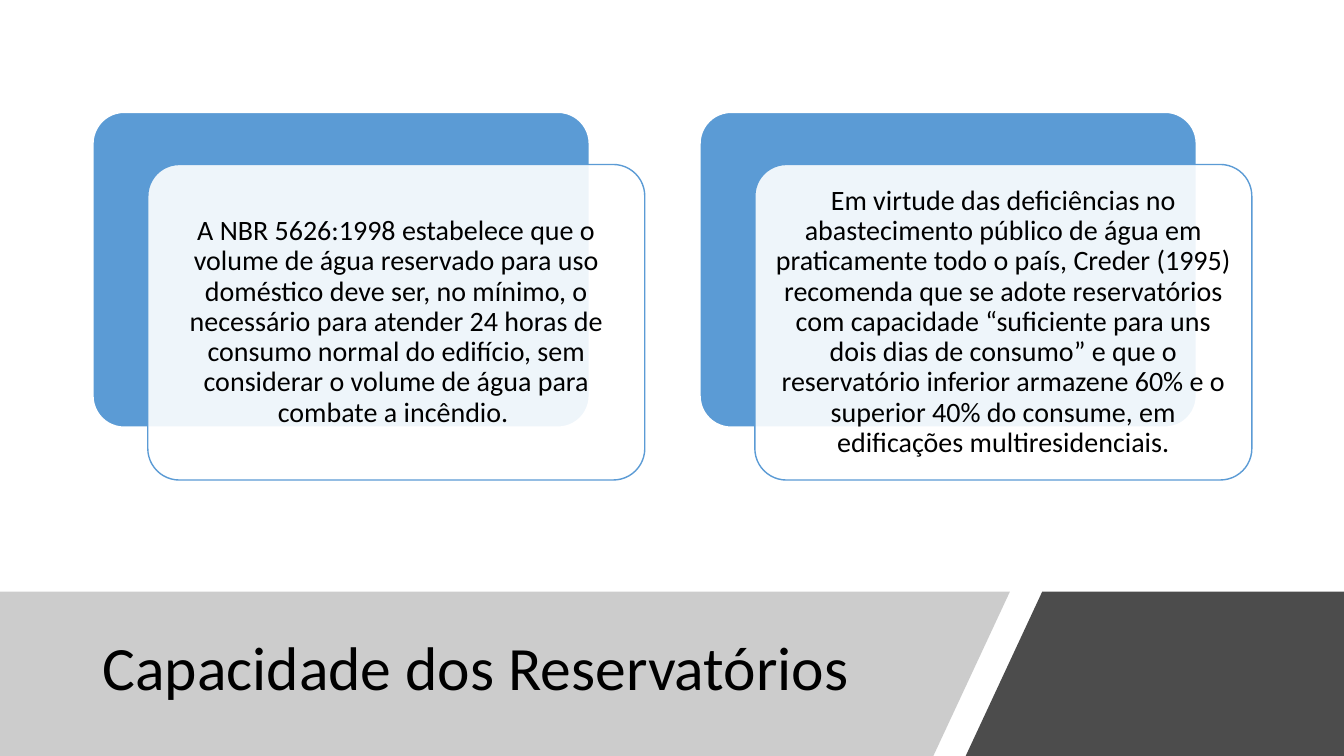
import lxml.etree
import pptx
import pptx.dml.color
import pptx.enum.shapes
import pptx.enum.text
import pptx.oxml.ns
import pptx.util

TITLE = "Capacidade dos Reservatórios"
STATEMENTS = [
    "A NBR 5626:1998 estabelece que o volume de água reservado para uso doméstico deve ser, "
    "no mínimo, o necessário para atender 24 horas de consumo normal do edifício, sem "
    "considerar o volume de água para combate a incêndio. ",
    "Em virtude das deficiências no abastecimento público de água em praticamente todo o país, "
    "Creder (1995) recomenda que se adote reservatórios com capacidade “suficiente para uns "
    "dois dias de consumo” e que o reservatório inferior armazene 60% e o superior 40% do "
    "consume, em edificações multiresidenciais.",
]

THEME = {
    "font": "Calibri",
    "title_size": 44,
    "body_size": 20,
    "text": "000000",
    "accent": "5B9BD5",
    "paper": "FFFFFF",
    "title_band": "808080",
    "corner_band": "000000",
}

WIDTH, HEIGHT = 960, 540
BAND_TOP = 422.6
BANDS = [
    (THEME["title_band"], 40, [(0, BAND_TOP), (721.4, BAND_TOP), (666.7, HEIGHT), (0, HEIGHT)]),
    (THEME["corner_band"], 70, [(744.5, BAND_TOP), (WIDTH, BAND_TOP), (WIDTH, HEIGHT), (689.8, HEIGHT)]),
]
TITLE_BOX = (66.2, 435.6, 607.7, 86.4)
CARD_LEFT, CARD_TOP = 66.2, 80
CARD_WIDTH, CARD_HEIGHT = 355, 225.4
CARD_PITCH = 433.6
FRONT_DX, FRONT_DY = 39.4, 37.5
CARD_INSET = 6

Pt = pptx.util.Pt


def paint(shape, color, opacity=100, outline=None, outline_width=1):
    shape.shadow.inherit = False
    shape.fill.solid()
    shape.fill.fore_color.rgb = pptx.dml.color.RGBColor.from_string(color)
    if opacity < 100:
        swatch = shape.element.spPr.find("./" + pptx.oxml.ns.qn("a:solidFill") + "/" + pptx.oxml.ns.qn("a:srgbClr"))
        alpha = lxml.etree.SubElement(swatch, pptx.oxml.ns.qn("a:alpha"))
        alpha.set("val", str(opacity * 1000))
    if outline:
        shape.line.color.rgb = pptx.dml.color.RGBColor.from_string(outline)
        shape.line.width = Pt(outline_width)
    else:
        shape.line.fill.background()


def write(shape, text, size, alignment):
    frame = shape.text_frame
    frame.text = text
    frame.word_wrap = True
    frame.vertical_anchor = pptx.enum.text.MSO_ANCHOR.MIDDLE
    paragraph = frame.paragraphs[0]
    paragraph.alignment = alignment
    paragraph.line_spacing = 0.9
    font = paragraph.runs[0].font
    font.name = THEME["font"]
    font.size = Pt(size)
    font.color.rgb = pptx.dml.color.RGBColor.from_string(THEME["text"])


def add_band(slide, color, opacity, corners):
    points = [(Pt(x), Pt(y)) for x, y in corners]
    outline = slide.shapes.build_freeform(*points[0])
    outline.add_line_segments(points[1:], close=True)
    paint(outline.convert_to_shape(), color, opacity)


def add_card(slide, left, top):
    card = slide.shapes.add_shape(
        pptx.enum.shapes.MSO_SHAPE.ROUNDED_RECTANGLE,
        Pt(left), Pt(top), Pt(CARD_WIDTH), Pt(CARD_HEIGHT),
    )
    card.adjustments[0] = 0.1
    return card


def add_statement(slide, left, text):
    back = add_card(slide, left, CARD_TOP)
    paint(back, THEME["accent"], outline=THEME["paper"], outline_width=1.5)
    front = add_card(slide, left + FRONT_DX, CARD_TOP + FRONT_DY)
    paint(front, THEME["paper"], opacity=90, outline=THEME["accent"])
    write(front, text, THEME["body_size"], pptx.enum.text.PP_ALIGN.CENTER)
    frame = front.text_frame
    frame.margin_left = frame.margin_right = Pt(CARD_INSET)
    frame.margin_top = frame.margin_bottom = Pt(CARD_INSET)


def main():
    deck = pptx.Presentation()
    deck.slide_width, deck.slide_height = Pt(WIDTH), Pt(HEIGHT)
    slide = deck.slides.add_slide(deck.slide_layouts[6])
    for band in BANDS:
        add_band(slide, *band)
    title = slide.shapes.add_textbox(*map(Pt, TITLE_BOX))
    write(title, TITLE, THEME["title_size"], pptx.enum.text.PP_ALIGN.LEFT)
    for column, statement in enumerate(STATEMENTS):
        add_statement(slide, CARD_LEFT + column * CARD_PITCH, statement)
    deck.save("out.pptx")


if __name__ == "__main__":
    main()
